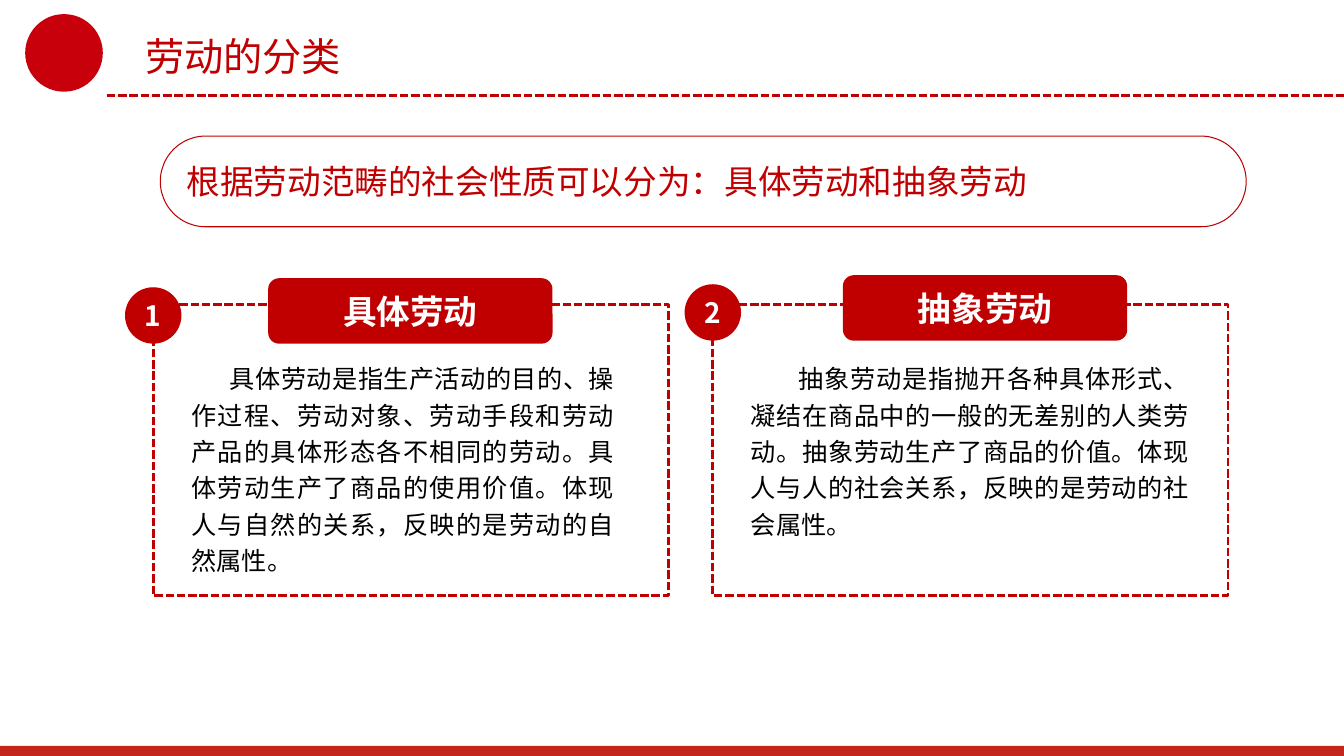
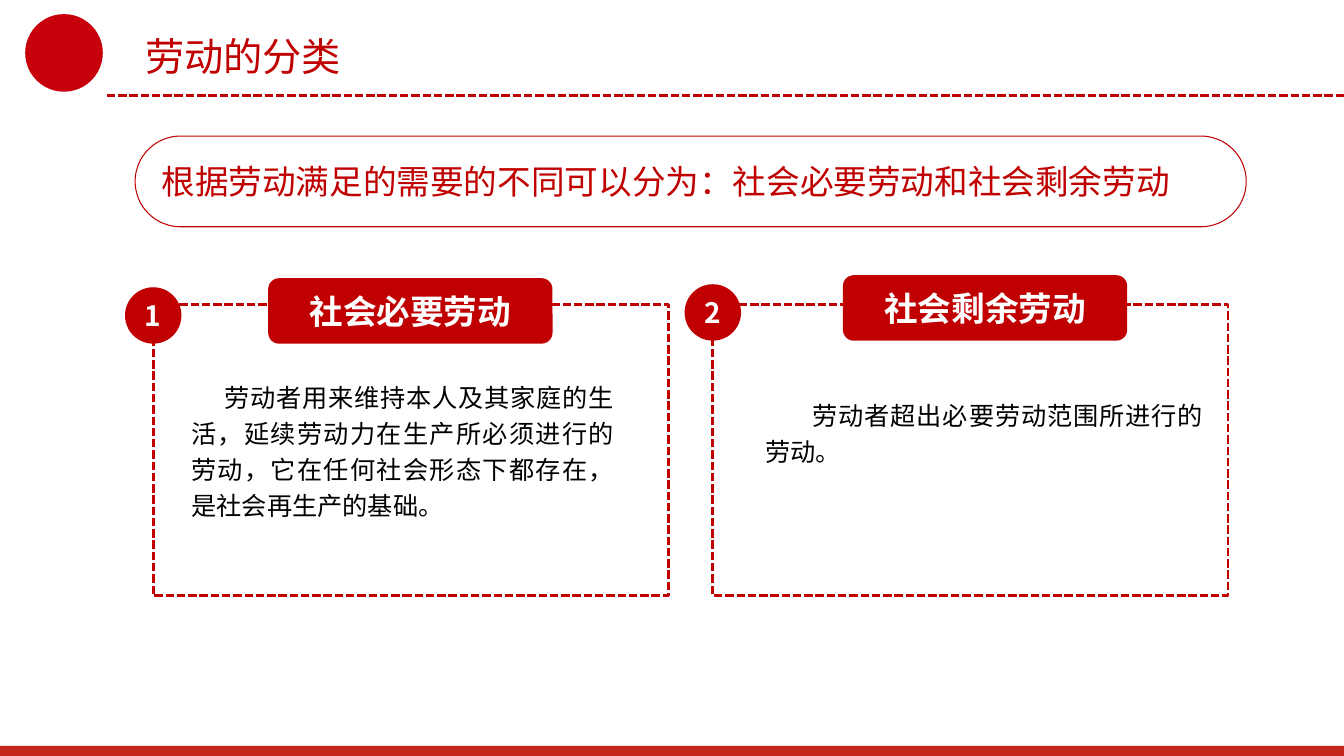
from dataclasses import dataclass

from pptx import Presentation
from pptx.dml.color import RGBColor
from pptx.enum.dml import MSO_LINE
from pptx.enum.shapes import MSO_CONNECTOR, MSO_SHAPE
from pptx.enum.text import MSO_ANCHOR, PP_ALIGN
from pptx.oxml.ns import qn
from pptx.shapes.autoshape import Shape
from pptx.slide import Slide
from pptx.util import Inches, Pt
from lxml.etree import SubElement

RED = RGBColor(0xC0, 0x00, 0x00)
EMBLEM_RED = RGBColor(0xC7, 0x00, 0x0B)
BAND_RED = RGBColor(0xC4, 0x26, 0x1D)
WHITE = RGBColor(0xFF, 0xFF, 0xFF)
BLACK = RGBColor(0x00, 0x00, 0x00)
FONT = "Noto Sans CJK SC"

PAGE_WIDTH, PAGE_HEIGHT = 13.33, 7.5
BAND_HEIGHT = 0.1
RULE_TOP = 0.95
FRAME_TOP, FRAME_WIDTH, FRAME_HEIGHT = 3.02, 5.11, 2.89
BADGE_SIZE = 0.56
LABEL_WIDTH, LABEL_HEIGHT = 2.82, 0.65
BANNER_RIGHT = 12.36


@dataclass(frozen=True)
class Column:
    """Fixed places of one framed card; its frame top is shared."""
    number: str
    frame_left: float
    badge_top: float
    label_left: float
    label_top: float
    body_width: float


@dataclass(frozen=True)
class Card:
    heading: str
    body: str
    body_left: float
    body_top: float
    body_height: float
    indent: float


@dataclass(frozen=True)
class Topic:
    banner: str
    banner_left: float
    cards: tuple[Card, Card]


COLUMNS = (
    Column("1", 1.52, 2.85, 2.66, 2.76, 4.39),
    Column("2", 7.07, 2.82, 8.36, 2.73, 4.54),
)

TOPICS = (
    Topic("根据劳动范畴的社会性质可以分为：具体劳动和抽象劳动", 1.59, (
        Card("具体劳动",
             "具体劳动是指生产活动的目的、操作过程、劳动对象、劳动手段和劳动产品的具体形态各不相同的劳动。"
             "具体劳动生产了商品的使用价值。体现人与自然的关系，反映的是劳动的自然属性。",
             1.8, 3.5, 2.28, 0.38),
        Card("抽象劳动",
             "抽象劳动是指抛开各种具体形式、凝结在商品中的一般的无差别的人类劳动。"
             "抽象劳动生产了商品的价值。体现人与人的社会关系，反映的是劳动的社会属性。",
             7.35, 3.5, 1.92, 0.47),
    )),
    Topic("根据劳动满足的需要的不同可以分为：社会必要劳动和社会剩余劳动", 1.34, (
        Card("社会必要劳动",
             "劳动者用来维持本人及其家庭的生活，延续劳动力在生产所必须进行的劳动，"
             "它在任何社会形态下都存在，是社会再生产的基础。",
             1.8, 3.68, 1.55, 0.33),
        Card("社会剩余劳动", "劳动者超出必要劳动范围所进行的劳动。",
             7.49, 3.86, 0.83, 0.47),
    )),
)


def write_text(box: Shape, text: str, *, size: float, color: RGBColor,
               bold: bool = False, align: PP_ALIGN = PP_ALIGN.LEFT,
               anchor: MSO_ANCHOR = MSO_ANCHOR.MIDDLE, wrap: bool = True,
               line_spacing: float = 1.0, indent: float = 0) -> None:
    frame = box.text_frame
    frame.word_wrap = wrap
    frame.vertical_anchor = anchor
    para = frame.paragraphs[0]
    para.alignment = align
    para.line_spacing = line_spacing
    if indent:
        properties = para._p.get_or_add_pPr()
        properties.set("marL", "0")
        properties.set("indent", str(Inches(indent)))
    span = para.add_run()
    span.text = text
    span.font.size = Pt(size)
    span.font.bold = bold
    span.font.color.rgb = color
    span.font.name = FONT
    east_asian = SubElement(span._r.get_or_add_rPr(), qn("a:ea"))
    east_asian.set("typeface", FONT)


def add_box(page: Slide, kind: MSO_SHAPE, left: float, top: float,
            width: float, height: float, *, fill: RGBColor | None = None,
            line_width: float = 0, dashed: bool = False) -> Shape:
    """Add a shape, filled or outlined in red."""
    box = page.shapes.add_shape(
        kind, Inches(left), Inches(top), Inches(width), Inches(height))
    box.shadow.inherit = False
    if fill is None:
        box.fill.background()
    else:
        box.fill.solid()
        box.fill.fore_color.rgb = fill
    if line_width:
        box.line.color.rgb = RED
        box.line.width = Pt(line_width)
        if dashed:
            box.line.dash_style = MSO_LINE.SQUARE_DOT
    else:
        box.line.fill.background()
    return box


def add_text_box(page: Slide, left: float, top: float, width: float,
                 height: float) -> Shape:
    return page.shapes.add_textbox(
        Inches(left), Inches(top), Inches(width), Inches(height))


def add_page_frame(page: Slide, title: str) -> None:
    """Add the emblem, dashed rule, bottom band and title."""
    add_box(page, MSO_SHAPE.OVAL, 0.25, 0.14, 0.77, 0.77, fill=EMBLEM_RED)
    rule = page.shapes.add_connector(
        MSO_CONNECTOR.STRAIGHT, Inches(1.06), Inches(RULE_TOP),
        Inches(PAGE_WIDTH), Inches(RULE_TOP))
    rule.line.color.rgb = RED
    rule.line.width = Pt(2)
    rule.line.dash_style = MSO_LINE.SQUARE_DOT
    SubElement(rule._element.spPr, qn("a:effectLst"))
    add_box(page, MSO_SHAPE.RECTANGLE, 0, PAGE_HEIGHT - BAND_HEIGHT,
            PAGE_WIDTH, BAND_HEIGHT, fill=BAND_RED)
    write_text(add_text_box(page, 1.34, 0.27, 2.14, 0.57), title,
               size=28, color=RED, anchor=MSO_ANCHOR.TOP, wrap=False)


def add_banner(page: Slide, text: str, left: float) -> None:
    banner = add_box(page, MSO_SHAPE.ROUNDED_RECTANGLE, left, 1.35,
                     BANNER_RIGHT - left, 0.9, line_width=0.75)
    banner.adjustments[0] = 0.5
    frame = banner.text_frame
    frame.margin_left = frame.margin_right = Inches(0.13)
    frame.margin_top = frame.margin_bottom = Inches(0.07)
    write_text(banner, text, size=24, color=RED)


def add_card(page: Slide, column: Column, card: Card) -> None:
    add_box(page, MSO_SHAPE.RECTANGLE, column.frame_left, FRAME_TOP,
            FRAME_WIDTH, FRAME_HEIGHT, line_width=2, dashed=True)
    badge = add_box(page, MSO_SHAPE.OVAL, column.frame_left - BADGE_SIZE / 2,
                    column.badge_top, BADGE_SIZE, BADGE_SIZE, fill=RED)
    write_text(badge, column.number, size=20, color=WHITE, bold=True,
               align=PP_ALIGN.CENTER)
    body = add_text_box(page, card.body_left, card.body_top,
                        column.body_width, card.body_height)
    write_text(body, card.body, size=18, color=BLACK,
               align=PP_ALIGN.JUSTIFY, anchor=MSO_ANCHOR.TOP,
               line_spacing=1.2, indent=card.indent)
    label = add_box(page, MSO_SHAPE.ROUNDED_RECTANGLE, column.label_left,
                    column.label_top, LABEL_WIDTH, LABEL_HEIGHT, fill=RED)
    write_text(label, card.heading, size=24, color=WHITE, bold=True,
               align=PP_ALIGN.CENTER)


def main() -> None:
    deck = Presentation()
    deck.slide_width = Inches(PAGE_WIDTH)
    deck.slide_height = Inches(PAGE_HEIGHT)
    blank_layout = deck.slide_layouts[6]
    for topic in TOPICS:
        page = deck.slides.add_slide(blank_layout)
        add_page_frame(page, "劳动的分类")
        add_banner(page, topic.banner, topic.banner_left)
        for column, card in zip(COLUMNS, topic.cards):
            add_card(page, column, card)
    deck.save("out.pptx")


if __name__ == "__main__":
    main()
